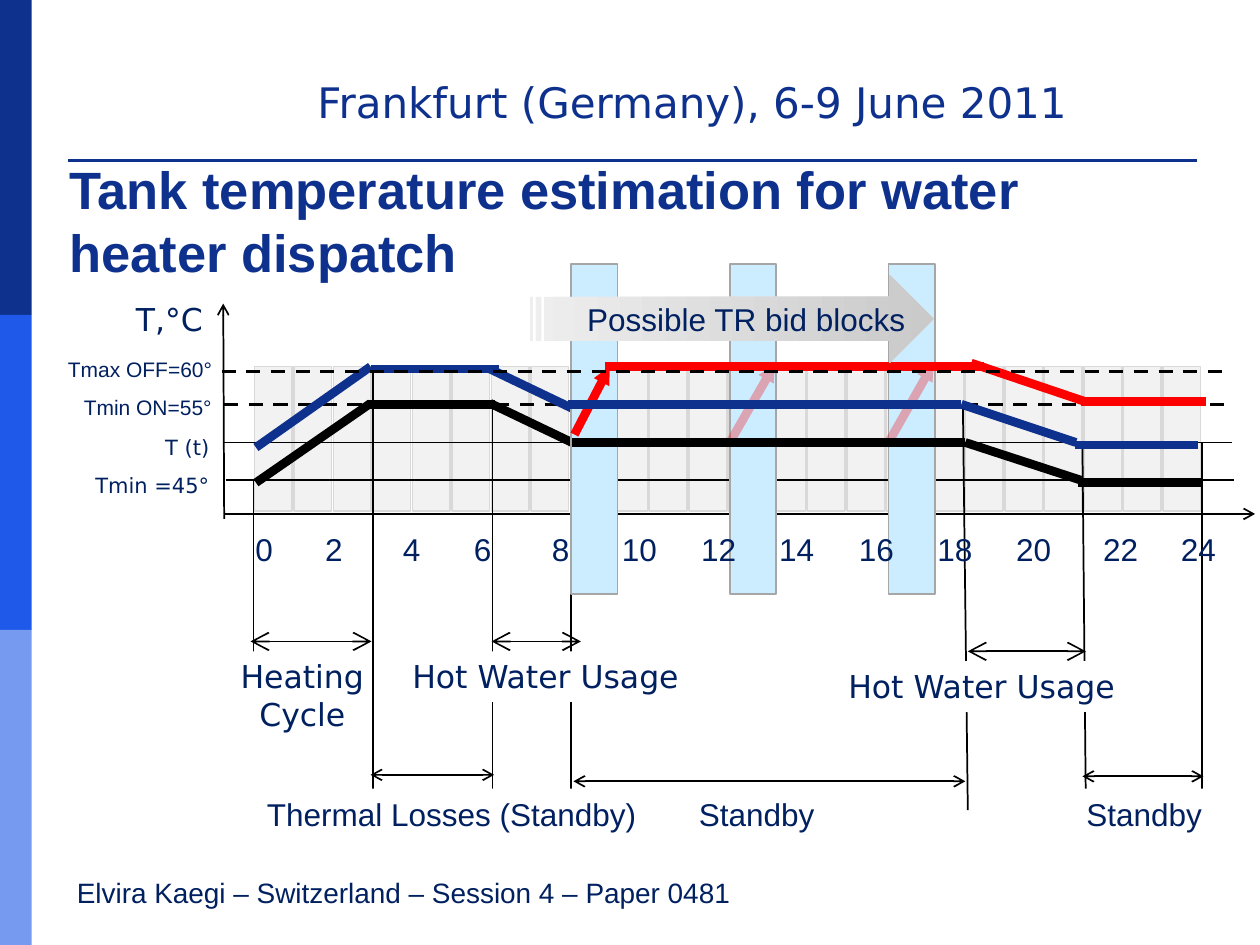
from pptx import Presentation
from pptx.dml.color import RGBColor
from pptx.enum.dml import MSO_LINE
from pptx.enum.shapes import MSO_CONNECTOR, MSO_SHAPE
from pptx.enum.text import MSO_ANCHOR, PP_ALIGN
from pptx.oxml import parse_xml
from pptx.oxml.ns import nsdecls, qn
from pptx.util import Cm, Pt
from lxml.etree import SubElement

COLORS = {
    "navy": "0E318D", "blue": "1F59E9", "sky": "779AF1", "text": "002060",
    "black": "000000", "white": "FFFFFF", "red": "FF0000",
    "cell": "F2F2F2", "cell_edge": "D9D9D9", "band": "CCECFF", "band_edge": "A6A6A6",
    "arrow_start": "EEEEEE", "arrow_end": "CACACA",
}
ARIAL, DEJAVU = "Arial", "DejaVu Sans"
LEFT, CENTER, RIGHT = PP_ALIGN.LEFT, PP_ALIGN.CENTER, PP_ALIGN.RIGHT
PLAIN_TABLE_STYLE = "{2D5ABB26-0587-4C30-8999-92F81FD0307C}"

SIDEBAR = ["navy", "blue", "sky"]
LEVEL_LABELS = [
    ("Tmax OFF=60°", 1.12, 7.06, 3.96, ARIAL, LEFT),
    ("Tmin ON=55°", 0.53, 7.82, 3.99, ARIAL, RIGHT),
    ("T (t)", 1.73, 8.64, 2.74, DEJAVU, RIGHT),
    ("Tmin =45°", 1.3, 9.4, 3.17, DEJAVU, RIGHT),
]
HOURS = range(0, 25, 2)
HOUR_TABS = [1.58, 3.15, 4.58, 6.15, 7.74, 9.34, 10.91, 12.52, 14.1, 15.69, 17.44, 19.01]
FIRST_CELL, LAST_CELL, CELL_COUNT = 5.13, 23.44, 24
AXES = [(4.52, 10.36, 25.3, 10.36), (4.52, 10.46, 4.5, 6.12)]
TEMPERATURE_GUIDES = [(4.52, 8.92, 24.84, 8.92), (4.55, 9.68, 24.87, 9.68)]
MIN_ON_GUIDE = (4.52, 8.15, 24.84, 8.15)
MAX_OFF_GUIDE = (4.47, 7.49, 24.79, 7.49)
LOWER_CURVE = [
    (5.16, 9.73, 7.47, 8.13), (9.88, 8.13, 11.53, 8.92), (19.46, 8.92, 21.79, 9.68),
    (7.39, 8.15, 9.98, 8.15), (21.74, 9.73, 24.23, 9.73),
]
UPPER_CURVE = [
    (9.88, 7.44, 11.53, 8.23), (7.47, 7.44, 10.06, 7.44), (5.16, 9.02, 7.47, 7.39),
    (19.38, 8.15, 21.69, 8.92), (21.67, 8.97, 24.16, 8.97),
]
LOWER_PLATEAU = (11.53, 8.92, 19.46, 8.92)
UPPER_PLATEAU = (11.46, 8.15, 19.38, 8.15)
BID_CURVE = [
    (12.19, 7.39, 19.84, 7.39), (19.58, 7.32, 21.89, 8.1), (21.79, 8.1, 24.31, 8.1),
]
BID_RISE = (11.58, 8.76, 12.29, 7.39)
POSSIBLE_RISES = [(14.71, 8.92, 15.62, 7.34), (17.91, 8.92, 18.82, 7.32)]
BID_BLOCKS = [11.51, 14.71, 17.91]
DROP_LINES = [
    (5.11, 9.68, 5.11, 13.49), (9.93, 8.13, 9.93, 16.38), (11.51, 8.13, 11.51, 16.13),
    (19.41, 8.13, 19.51, 16.33), (21.82, 8.92, 21.89, 16.33), (24.23, 8.92, 24.23, 16.64),
]
HEATED_DROP = (7.52, 7.52, 7.52, 16.71)
USAGE_SPANS = [(5.05, 12.93, 7.49, 12.93), (9.91, 12.93, 11.71, 12.93), (19.51, 13.13, 21.89, 13.13)]
STANDBY_SPANS = [(7.47, 15.62, 9.96, 15.62), (11.56, 15.75, 19.46, 15.75), (21.82, 15.65, 24.26, 15.65)]
PHASE_LABELS = [
    ("Heating Cycle", 4.29, 13.13, 3.61, 1.8, DEJAVU),
    ("Standby", 13.49, 15.9, 3.53, 1.02, ARIAL),
    ("Standby", 21.31, 15.9, 3.51, 1.02, ARIAL),
    ("Hot Water Usage ", 7.9, 13.13, 6.4, 1.02, DEJAVU),
    ("Hot Water Usage ", 16.69, 13.33, 6.4, 1.02, DEJAVU),
]

presentation = Presentation()
presentation.slide_width, presentation.slide_height = Cm(25.4), Cm(19.05)
slide = presentation.slides.add_slide(presentation.slide_layouts[6])


def color(name):
    return RGBColor.from_string(COLORS[name])


def add_box(left, top, width, height, fill, edge=None, preset=MSO_SHAPE.RECTANGLE):
    shape = slide.shapes.add_shape(preset, Cm(left), Cm(top), Cm(width), Cm(height))
    shape.shadow.inherit = False
    shape.fill.solid()
    shape.fill.fore_color.rgb = color(fill)
    if edge:
        shape.line.color.rgb = color(edge)
        shape.line.width = Pt(1)
    else:
        shape.line.fill.background()
    return shape


def add_text(text, left, top, width, height, size=18, font=ARIAL, ink="text",
             align=LEFT, bold=False, fill=None, anchor=MSO_ANCHOR.TOP, tabs=()):
    if fill:
        shape = add_box(left, top, width, height, fill)
    else:
        shape = slide.shapes.add_textbox(Cm(left), Cm(top), Cm(width), Cm(height))
    frame = shape.text_frame
    frame.word_wrap = True
    frame.vertical_anchor = anchor
    paragraph = frame.paragraphs[0]
    paragraph.alignment = align
    if tabs:
        tab_list = SubElement(paragraph._p.get_or_add_pPr(), qn("a:tabLst"))
        for position in tabs:
            SubElement(tab_list, qn("a:tab"), pos=str(Cm(position)), algn="ctr")
    run = paragraph.add_run()
    run.text = text
    run.font.name, run.font.size, run.font.bold = font, Pt(size), bold
    run.font.color.rgb = color(ink)


def add_line(points, ink="black", width=1, dashed=False, head=None, tail=None,
             head_size="med", opacity=None):
    connector = slide.shapes.add_connector(MSO_CONNECTOR.STRAIGHT, *map(Cm, points))
    connector.line.color.rgb = color(ink)
    connector.line.width = Pt(width)
    if dashed:
        connector.line.dash_style = MSO_LINE.DASH
    outline = connector.line._get_or_add_ln()
    for tag, kind in (("a:headEnd", head), ("a:tailEnd", tail)):
        if kind:
            SubElement(outline, qn(tag), type=kind, w=head_size, len=head_size)
    if opacity:
        SubElement(next(outline.iter(qn("a:srgbClr"))), qn("a:alpha"), val=str(opacity * 1000))
    connector._element.spPr.append(parse_xml(f"<a:effectLst {nsdecls('a')}/>"))


def add_lines(segments, **style):
    for points in segments:
        add_line(points, **style)


def add_header_rule(left, top, width, height):
    frame = slide.shapes.add_table(1, 1, Cm(left), Cm(top), Cm(width), Cm(height))
    table = frame.table
    table.first_row = table.horz_banding = False
    next(frame._element.iter(qn("a:tableStyleId"))).text = PLAIN_TABLE_STYLE
    cell = table.cell(0, 0)
    cell.margin_left = cell.margin_right = cell.margin_top = cell.margin_bottom = 0
    cell.fill.background()
    SubElement(cell.text_frame.paragraphs[0]._p, qn("a:endParaRPr"), sz="600")
    border = (f'<a:lnB {nsdecls("a")} w="{Pt(2.25)}"><a:solidFill>'
              f'<a:srgbClr val="{COLORS["navy"]}"/></a:solidFill></a:lnB>')
    cell._tc.get_or_add_tcPr().insert(0, parse_xml(border))


for index, fill in enumerate(SIDEBAR):
    add_box(0, index * 6.35, 0.64, 6.35, fill)
add_header_rule(1.37, 2.72, 22.76, 0.51)
add_text("Frankfurt (Germany), 6-9 June 2011", 6.15, 1.42, 16.71, 1.27,
         size=24, font=DEJAVU, ink="navy")
add_text("Tank temperature estimation for water heater dispatch", 1.15, 3.34, 22.86, 2.18,
         size=30, ink="navy", bold=True, anchor=MSO_ANCHOR.MIDDLE)

cell_step = (LAST_CELL - FIRST_CELL) / (CELL_COUNT - 1)
for hour in range(CELL_COUNT):
    add_box(FIRST_CELL + hour * cell_step, 7.39, 0.76, 2.92, "cell", "cell_edge")
add_lines(AXES, tail="arrow")
add_text("T,°C", 2.49, 5.92, 2.36, 1.02, font=DEJAVU)
add_line(MIN_ON_GUIDE, width=2, dashed=True)
add_lines(TEMPERATURE_GUIDES)
add_lines(LOWER_CURVE, width=5)
for text, left, top, width, font, align in LEVEL_LABELS:
    add_text(text, left, top, width, 0.76, size=12, font=font, align=align)

add_lines(DROP_LINES)
add_lines(UPPER_CURVE, ink="navy", width=5)
add_lines(USAGE_SPANS, head="arrow", tail="arrow", head_size="lg")
add_lines(STANDBY_SPANS, head="arrow", tail="arrow")
for text, left, top, width, height, font in PHASE_LABELS:
    add_text(text, left, top, width, height, font=font, align=CENTER, fill="white")
add_line(HEATED_DROP)
add_text("Thermal Losses (Standby)", 4.9, 15.9, 8.41, 1.02, align=CENTER, fill="white")

for left in BID_BLOCKS:
    add_box(left, 5.33, 0.94, 6.65, "band", "band_edge")
add_line(BID_RISE, ink="red", width=5, tail="triangle", head_size="sm")
add_lines(BID_CURVE, ink="red", width=5)
bid_arrow = add_box(10.69, 5.54, 8.13, 1.78, "arrow_end", preset=MSO_SHAPE.STRIPED_RIGHT_ARROW)
bid_arrow.fill.gradient()
bid_arrow.fill.gradient_angle = 0
for stop, name, position in zip(bid_arrow.fill.gradient_stops, ("arrow_start", "arrow_end"), (0, 1)):
    stop.color.rgb = color(name)
    stop.position = position
add_lines(POSSIBLE_RISES, ink="red", width=5, tail="triangle", head_size="sm", opacity=30)
add_line(MAX_OFF_GUIDE, width=2, dashed=True)
add_line(LOWER_PLATEAU, width=5)
add_line(UPPER_PLATEAU, ink="navy", width=5)
add_text("\t".join(map(str, HOURS)), 4.9, 10.57, 20.4, 1.02, tabs=HOUR_TABS)
add_text("Possible TR bid blocks", 10.69, 5.92, 8.71, 1.02, align=CENTER)
add_text("Elvira Kaegi – Switzerland – Session 4 – Paper 0481", 1.3, 17.53, 20.02, 0.94, size=16)

presentation.save("out.pptx")
